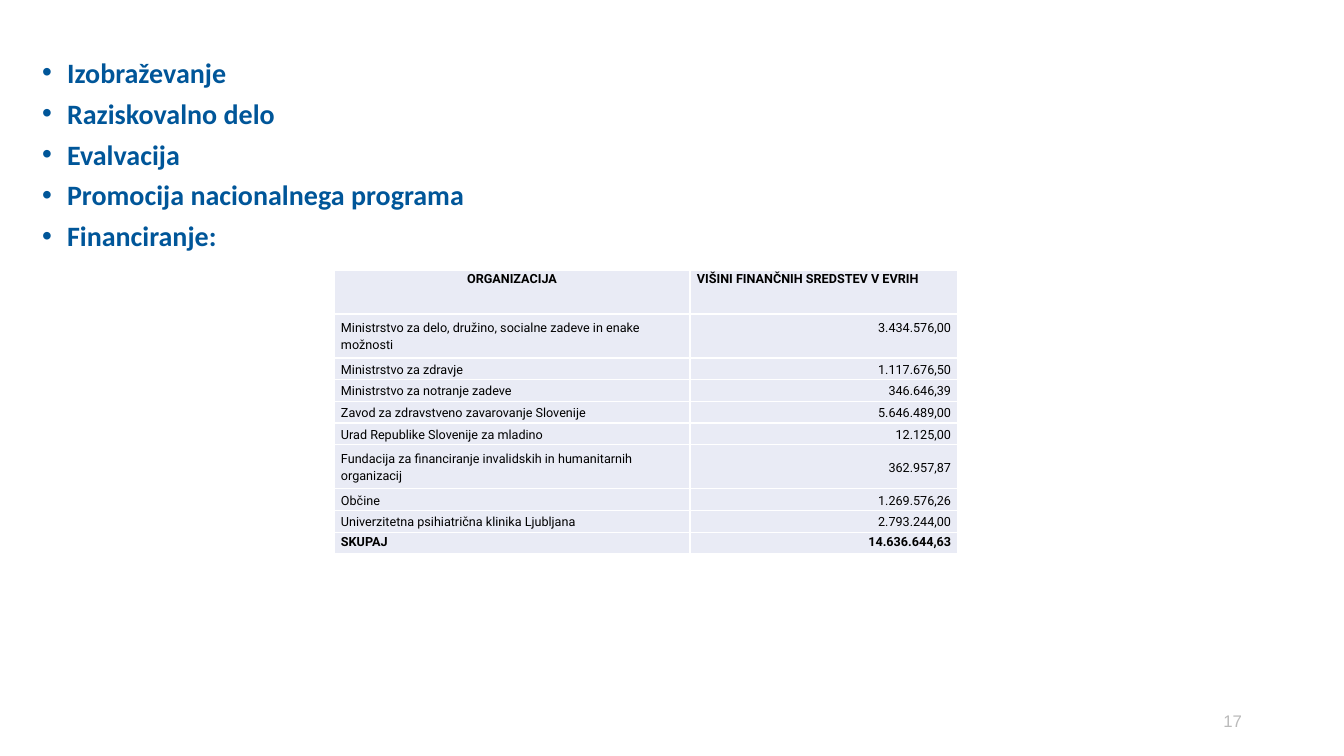
from lxml.etree import SubElement
from pptx import Presentation
from pptx.dml.color import RGBColor
from pptx.enum.text import MSO_ANCHOR as Anchor, MSO_AUTO_SIZE as AutoSize, PP_ALIGN as Align
from pptx.oxml.ns import qn
from pptx.util import Pt

EMU_PER_PX = 914400 / 100.8

BLUE, GREY, BLACK, WHITE, PALE = "005699", "BABABA", "000000", "FFFFFF", "E9EBF5"

TOPICS = ["Izobraževanje", "Raziskovalno delo", "Evalvacija",
          "Promocija nacionalnega programa", "Financiranje:"]

HEADINGS = ("ORGANIZACIJA", "VIŠINI FINANČNIH SREDSTEV V EVRIH")
FUNDING = [
    ("Ministrstvo za delo, družino, socialne zadeve in enake možnosti", "3.434.576,00"),
    ("Ministrstvo za zdravje", "1.117.676,50"),
    ("Ministrstvo za notranje zadeve", "346.646,39"),
    ("Zavod za zdravstveno zavarovanje Slovenije", "5.646.489,00"),
    ("Urad Republike Slovenije za mladino", "12.125,00"),
    ("Fundacija za financiranje invalidskih in humanitarnih organizacij", "362.957,87"),
    ("Občine", "1.269.576,26"),
    ("Univerzitetna psihiatrična klinika Ljubljana", "2.793.244,00"),
]
TOTAL = ("SKUPAJ", "14.636.644,63")
TALL_ROWS = (0, 1, 6)


def px(length):
    return int(length * EMU_PER_PX)


def color(value):
    return RGBColor.from_string(value)


def write(para, text, font="Roboto", size=9, ink=BLACK, bold=False,
          align=Align.LEFT, spacing=1.0, before=0):
    para.alignment = align
    para.line_spacing = spacing
    para.space_before = Pt(before)
    span = para.add_run()
    span.text = text
    span.font.name = font
    span.font.size = Pt(size)
    span.font.bold = bold
    span.font.color.rgb = color(ink)


def add_bullet(para, indent):
    props = para._p.get_or_add_pPr()
    props.set("marL", str(px(indent)))
    props.set("indent", str(-px(indent)))
    SubElement(props, qn("a:buFont"), typeface="Arial")
    SubElement(props, qn("a:buChar"), char="•")


def fill_topics(body, left, top, width, height):
    body.left, body.top, body.width, body.height = map(px, (left, top, width, height))
    frame = body.text_frame
    frame.auto_size = AutoSize.NONE
    for index, topic in enumerate(TOPICS):
        para = frame.add_paragraph() if index else frame.paragraphs[0]
        write(para, topic, font="Calibri", size=20, ink=BLUE, bold=True,
              spacing=0.8 if index else 0.7, before=10)
        add_bullet(para, 25)


def add_borders(cell):
    props = cell._tc.get_or_add_tcPr()
    for position, side in enumerate(("a:lnL", "a:lnR", "a:lnT", "a:lnB")):
        line = props.makeelement(qn(side), {"w": str(Pt(1))})
        fill = SubElement(line, qn("a:solidFill"))
        SubElement(fill, qn("a:srgbClr"), val=WHITE)
        props.insert(position, line)


def fill_cell(cell, text, anchor=Anchor.MIDDLE, **style):
    cell.margin_left = cell.margin_right = px(7)
    cell.margin_top = cell.margin_bottom = 0
    cell.vertical_anchor = anchor
    cell.fill.solid()
    cell.fill.fore_color.rgb = color(PALE)
    write(cell.text_frame.paragraphs[0], text, spacing=1.15, **style)
    add_borders(cell)


def add_funding_table(page, left, top, widths, height, tall):
    rows = [HEADINGS, *FUNDING, TOTAL]
    last = len(rows) - 1
    table = page.shapes.add_table(len(rows), 2, px(left), px(top),
                                  px(sum(widths)), px(height)).table
    for column, width in zip(table.columns, widths):
        column.width = px(width)

    # The short rows share what the tall ones leave
    short = (height - tall * len(TALL_ROWS)) / (len(rows) - len(TALL_ROWS))
    for index, (name, amount) in enumerate(rows):
        table.rows[index].height = px(tall if index in TALL_ROWS else short)
        strong = index in (0, last)
        anchor = Anchor.TOP if strong else Anchor.MIDDLE
        fill_cell(table.cell(index, 0), name, anchor, bold=strong,
                  align=Align.LEFT if index else Align.CENTER)
        fill_cell(table.cell(index, 1), amount, anchor, bold=strong,
                  align=Align.RIGHT if index else Align.LEFT)

    # The first amount lines up with the first line of its two-line name
    first_amount = table.cell(1, 1)
    first_amount.vertical_anchor = Anchor.TOP
    first_amount.margin_top = px(5)


def add_page_number(page, text, left, top, width, height):
    box = page.shapes.add_textbox(*map(px, (left, top, width, height)))
    frame = box.text_frame
    frame.word_wrap = True
    frame.vertical_anchor = Anchor.MIDDLE
    write(frame.paragraphs[0], text, font="Arial", size=12, ink=GREY, align=Align.RIGHT)


def main():
    deck = Presentation()
    deck.slide_width, deck.slide_height = px(1344), px(756)
    page = deck.slides.add_slide(deck.slide_layouts[1])

    # The slide has no title
    title = page.shapes.title._element
    title.getparent().remove(title)

    fill_topics(page.placeholders[1], 32, 60, 1105, 591)
    add_page_number(page, "17", 950, 701, 302, 40)
    add_funding_table(page, 334, 270, widths=(356, 268), height=284, tall=44)
    deck.save("out.pptx")


if __name__ == "__main__":
    main()
